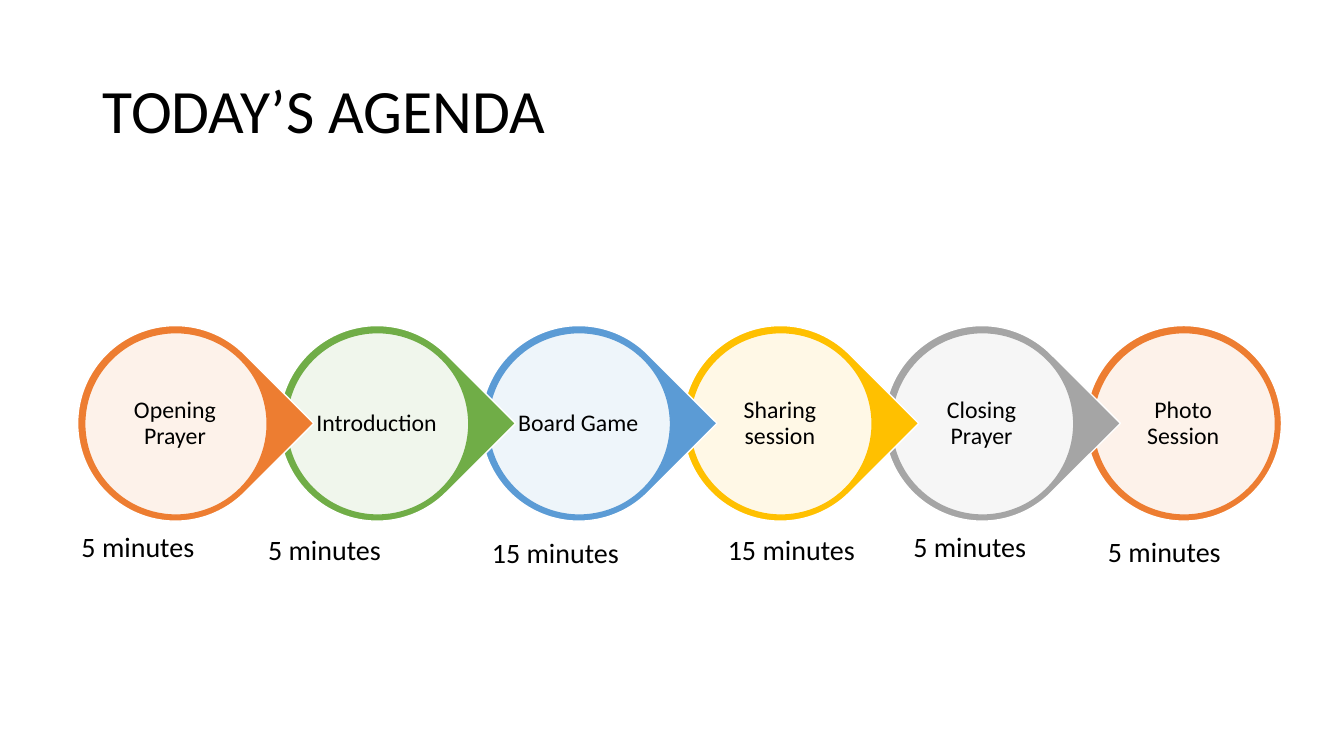
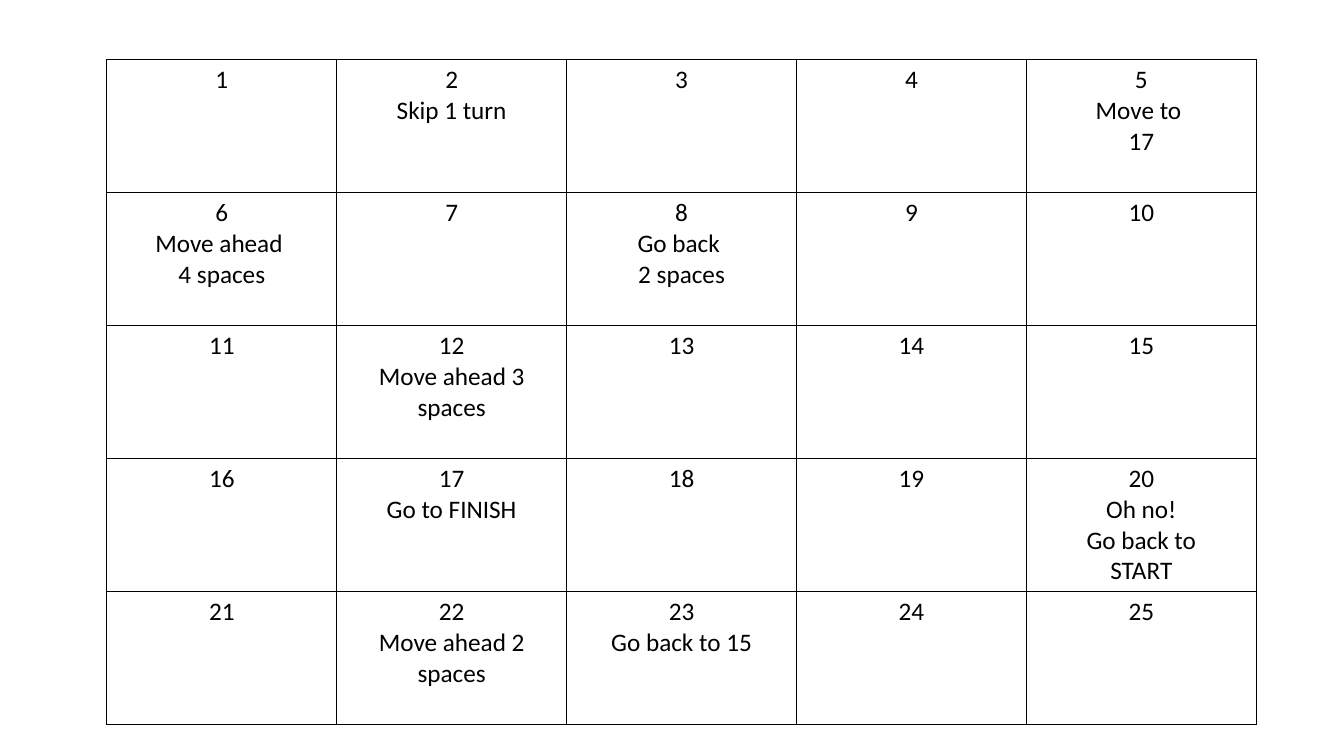
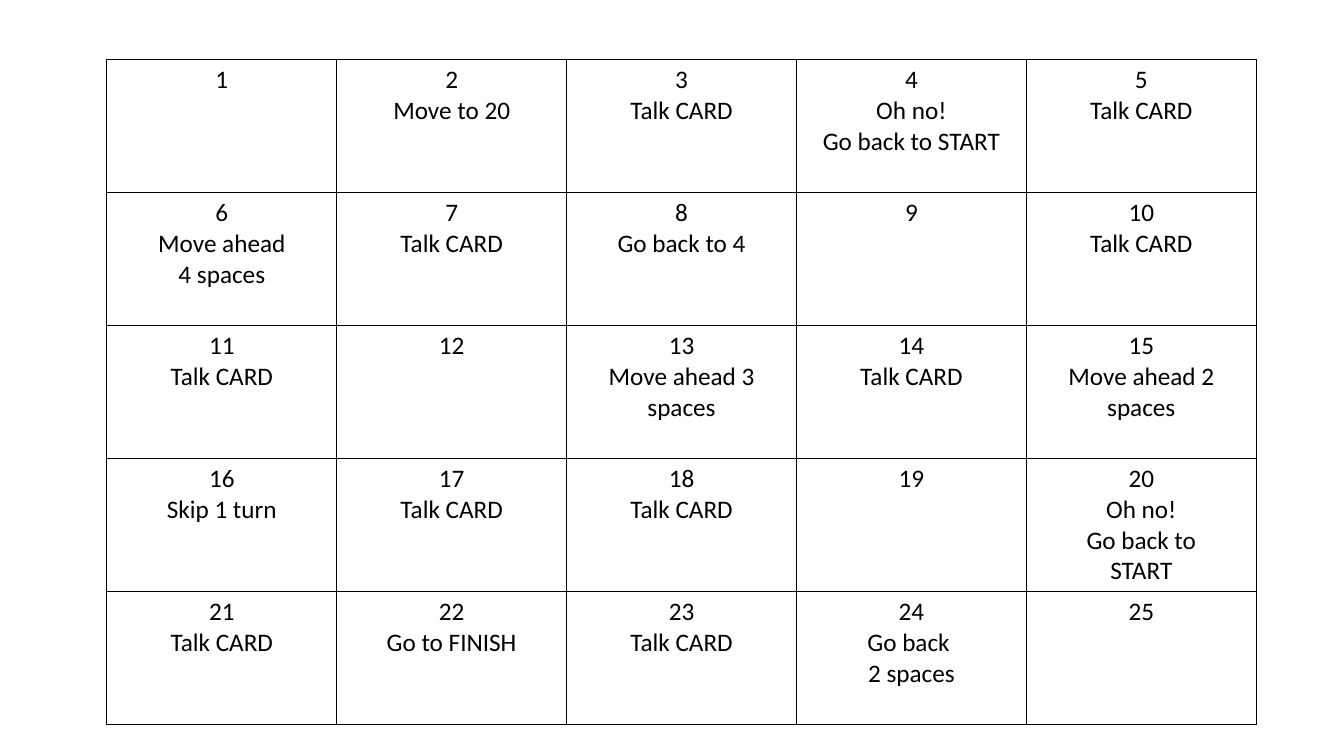
"""Build a meeting agenda slide and two numbered board game slides."""
from lxml.etree import SubElement
from pptx import Presentation
from pptx.dml.color import RGBColor
from pptx.enum.shapes import MSO_SHAPE
from pptx.enum.text import MSO_ANCHOR, MSO_AUTO_SIZE, PP_ALIGN
from pptx.oxml import parse_xml
from pptx.oxml.ns import nsdecls, qn
from pptx.util import Pt

PX = 9144
FONT = "Calibri"
COLOURS = {
    "black": "000000",
    "white": "FFFFFF",
    "orange": "ED7D31",
    "green": "70AD47",
    "blue": "5B9BD5",
    "yellow": "FFC000",
    "grey": "A5A5A5",
}


def write(para, text, size, align=PP_ALIGN.LEFT, spacing=1.0):
    para.alignment = align
    para.line_spacing = spacing
    span = para.add_run()
    span.text = text
    span.font.name = FONT
    span.font.size = Pt(size)
    span.font.color.rgb = RGBColor.from_string(COLOURS["black"])


def add_outlined(page, preset, left, top, size, fill, line):
    shape = page.shapes.add_shape(preset, left * PX, top * PX, size * PX, size * PX)
    shape.shadow.inherit = False
    shape.fill.solid()
    shape.fill.fore_color.rgb = RGBColor.from_string(COLOURS[fill])
    shape.line.color.rgb = RGBColor.from_string(COLOURS[line])
    shape.line.width = Pt(1)
    return shape


deck = Presentation()
deck.slide_width = 1333 * PX
deck.slide_height = 750 * PX
title_layout = deck.slide_layouts[5]
blank_layout = deck.slide_layouts[6]

page = deck.slides.add_slide(title_layout)
title = page.shapes.title
title.left, title.top, title.width, title.height = 92 * PX, 40 * PX, 1150 * PX, 145 * PX
title.text_frame.vertical_anchor = MSO_ANCHOR.MIDDLE
write(title.text_frame.paragraphs[0], "TODAY’S AGENDA", 44, spacing=0.9)

STEP = 200
stages = [
    ("Opening Prayer", "orange", "5 minutes", 71, 520, 141),
    ("Introduction", "green", "5 minutes", 256, 523, 141),
    ("Board Game", "blue", "15 minutes", 478, 526, 152),
    ("Sharing session", "yellow", "15 minutes", 712, 523, 152),
    ("Closing Prayer", "grey", "5 minutes", 896, 520, 152),
    ("Photo Session", "orange", "5 minutes", 1089, 525, 141),
]
last = len(stages) - 1
for index in range(last, -1, -1):
    label, colour, *_ = stages[index]
    left = 77 + index * STEP
    preset = MSO_SHAPE.OVAL if index == last else MSO_SHAPE.TEAR
    marker = add_outlined(page, preset, left, 323, 194, colour, "white")
    if index < last:
        marker.rotation = 45
    disc = add_outlined(page, MSO_SHAPE.OVAL, left + 7, 330, 181, "white", colour)
    white = disc.fill._xPr.find(qn("a:solidFill"))[0]
    SubElement(white, qn("a:alpha")).set("val", "90000")
    box = page.shapes.add_textbox((left + 32) * PX, 356 * PX, 129 * PX, 129 * PX)
    frame = box.text_frame
    frame.word_wrap = True
    frame.vertical_anchor = MSO_ANCHOR.MIDDLE
    frame.margin_left = frame.margin_right = 2 * PX
    frame.margin_top = frame.margin_bottom = 2 * PX
    write(frame.paragraphs[0], label, 17, PP_ALIGN.CENTER, 0.9)

for label, colour, duration, left, top, width in stages:
    box = page.shapes.add_textbox(left * PX, top * PX, width * PX, 44 * PX)
    box.text_frame.word_wrap = True
    box.text_frame.auto_size = MSO_AUTO_SIZE.SHAPE_TO_FIT_TEXT
    write(box.text_frame.paragraphs[0], duration, 20)

GRID = 5
COLUMN = 228
ROW = 132
TALK = ["Talk CARD"]
RESTART = ["Oh no!", "Go back to", "START"]
boards = [
    {
        2: ["Skip 1 turn"],
        5: ["Move to ", "17"],
        6: ["Move ahead ", "4 spaces"],
        8: ["Go back ", "2 spaces"],
        12: ["Move ahead 3 spaces"],
        17: ["Go to FINISH"],
        20: RESTART,
        22: ["Move ahead 2 spaces"],
        23: ["Go back to 15"],
    },
    {
        2: ["Move to 20"],
        4: ["Oh no!", "Go back to START"],
        6: ["Move ahead", "4 spaces"],
        8: ["Go back to 4"],
        13: ["Move ahead 3 spaces"],
        15: ["Move ahead 2 spaces"],
        16: ["Skip 1 turn"],
        20: RESTART,
        22: ["Go to FINISH"],
        24: ["Go back ", "2 spaces"],
        **dict.fromkeys([3, 5, 7, 10, 11, 14, 17, 18, 21, 23], TALK),
    },
]
for board in boards:
    page = deck.slides.add_slide(blank_layout)
    table = page.shapes.add_table(
        GRID, GRID, 106 * PX, 59 * PX, GRID * COLUMN * PX, GRID * ROW * PX
    ).table
    table.first_row = False
    table.horz_banding = False
    for number, cell in enumerate(table.iter_cells(), start=1):
        properties = cell._tc.get_or_add_tcPr()
        for side in ("lnL", "lnR", "lnT", "lnB"):
            properties.append(parse_xml(
                f'<a:{side} {nsdecls("a")} w="12700"><a:solidFill>'
                f'<a:srgbClr val="{COLOURS["black"]}"/></a:solidFill></a:{side}>'
            ))
        cell.fill.background()
        frame = cell.text_frame
        for position, text in enumerate([str(number), *board.get(number, [])]):
            para = frame.add_paragraph() if position else frame.paragraphs[0]
            write(para, text, 18, PP_ALIGN.CENTER)

deck.save("out.pptx")
